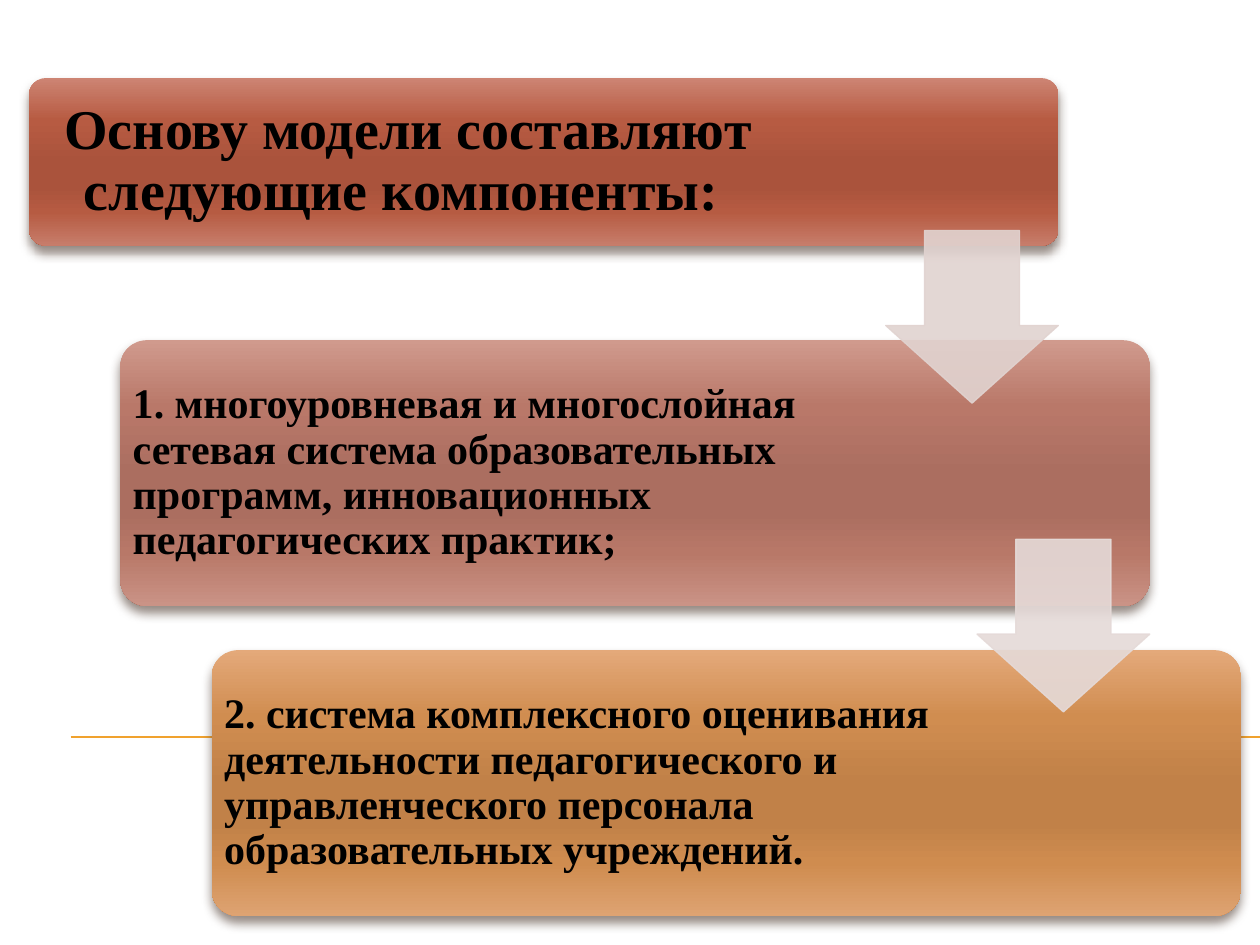
from lxml.etree import SubElement
from pptx import Presentation
from pptx.dml.color import RGBColor
from pptx.enum.shapes import MSO_CONNECTOR, MSO_SHAPE
from pptx.enum.text import MSO_ANCHOR, PP_ALIGN
from pptx.oxml.ns import qn
from pptx.util import Inches, Pt

STEPS = [
    dict(text="Основу модели составляют следующие компоненты: ",
         top=0.62, height=1.33, text_width=6.02, inset=0.13, size=32, align=PP_ALIGN.CENTER,
         colors=["CD8473", "B75B42", "AA533C", "AA533C", "B65B42", "C77D6B"]),
    dict(text="1. многоуровневая и многослойная сетевая система образовательных "
              "программ, инновационных педагогических практик;",
         top=2.7, height=2.11, text_width=6.08, inset=0.1, size=24, align=PP_ALIGN.LEFT,
         colors=["D09A8D", "B97869", "AB6E60", "AB6E60", "B87868", "CA9386"]),
    dict(text="2. система комплексного оценивания деятельности педагогического и "
              "управленческого персонала образовательных учреждений.",
         top=5.16, height=2.11, text_width=6.08, inset=0.1, size=24, align=PP_ALIGN.LEFT,
         colors=["E4A97A", "D08D50", "C18148", "C18148", "CF8C4F", "DEA372"]),
]
ARROWS = [(1.83, "E1D3D0"), (4.28, "E5DAD8")]  # top, colour
STOPS = [0, 25, 50, 65, 80, 100]
LEFT, STEP_X, BAR_W, ARROW = 0.23, 0.725, 8.17, 1.37


def rgb(value):
    return RGBColor.from_string(value)


def add_color(parent, value, alpha=None):
    clr = SubElement(parent, qn("a:srgbClr"), val=value)
    if alpha is not None:
        SubElement(clr, qn("a:alpha"), val=str(alpha * 1000))


def set_gradient(shape, colors):
    """Fill from top to bottom with one colour at each of STOPS."""
    shape.fill.gradient()
    shape.fill.gradient_angle = 270
    stops = shape._element.spPr.find(".//" + qn("a:gsLst"))
    for old in list(stops):
        stops.remove(old)
    for pos, value in zip(STOPS, colors):
        add_color(SubElement(stops, qn("a:gs"), pos=str(pos * 1000)), value)


def add_shadow(shape):
    effects = shape._element.spPr.find(qn("a:effectLst"))
    shadow = SubElement(effects, qn("a:outerShdw"), blurRad=str(Pt(6)), dist=str(Pt(4)),
                        dir="5400000", rotWithShape="0")
    add_color(shadow, "4E3B30", 60)


def add_bar(slide, left, step):
    top, height = Inches(step["top"]), Inches(step["height"])
    bar = slide.shapes.add_shape(MSO_SHAPE.ROUNDED_RECTANGLE, left, top, Inches(BAR_W), height)
    bar.adjustments[0] = 0.1
    bar.line.fill.background()
    bar.shadow.inherit = False
    set_gradient(bar, step["colors"])
    add_shadow(bar)

    tf = slide.shapes.add_textbox(left, top, Inches(step["text_width"]), height).text_frame
    tf.word_wrap = True
    tf.vertical_anchor = MSO_ANCHOR.MIDDLE
    tf.margin_left = tf.margin_right = tf.margin_top = tf.margin_bottom = Inches(step["inset"])
    p = tf.paragraphs[0]
    p.text = step["text"]
    p.alignment = step["align"]
    p.line_spacing = 0.9
    p.font.name = "Times New Roman"
    p.font.size = Pt(step["size"])
    p.font.bold = True
    p.font.color.rgb = rgb("000000")


def add_arrow(slide, left, top, color):
    arrow = slide.shapes.add_shape(MSO_SHAPE.DOWN_ARROW, left, Inches(top),
                                   Inches(ARROW), Inches(ARROW))
    arrow.adjustments[0] = 0.55
    arrow.adjustments[1] = 0.45
    arrow.shadow.inherit = False
    arrow.line.width = Pt(0.79)
    for fill in (arrow.fill, arrow.line.fill):
        fill.solid()
        fill.fore_color.rgb = rgb(color)
    for clr in arrow._element.spPr.iter(qn("a:srgbClr")):
        SubElement(clr, qn("a:alpha"), val="90000")


def main():
    prs = Presentation()
    prs.slide_width, prs.slide_height = Inches(10), Inches(7.5)
    slide = prs.slides.add_slide(prs.slide_layouts[6])

    rule = slide.shapes.add_connector(MSO_CONNECTOR.STRAIGHT, Inches(0.56), Inches(5.85),
                                      Inches(10), Inches(5.85))
    rule.line.color.rgb = rgb("F0A22E")
    rule.line.width = Pt(0.75)
    SubElement(rule._element.spPr, qn("a:effectLst"))

    for i, step in enumerate(STEPS):
        add_bar(slide, Inches(LEFT + i * STEP_X), step)
    for i, (top, color) in enumerate(ARROWS):
        # Each arrow ends flush with the right edge of the bar above it
        add_arrow(slide, Inches(LEFT + i * STEP_X + BAR_W - ARROW), top, color)

    prs.save("out.pptx")


if __name__ == "__main__":
    main()
